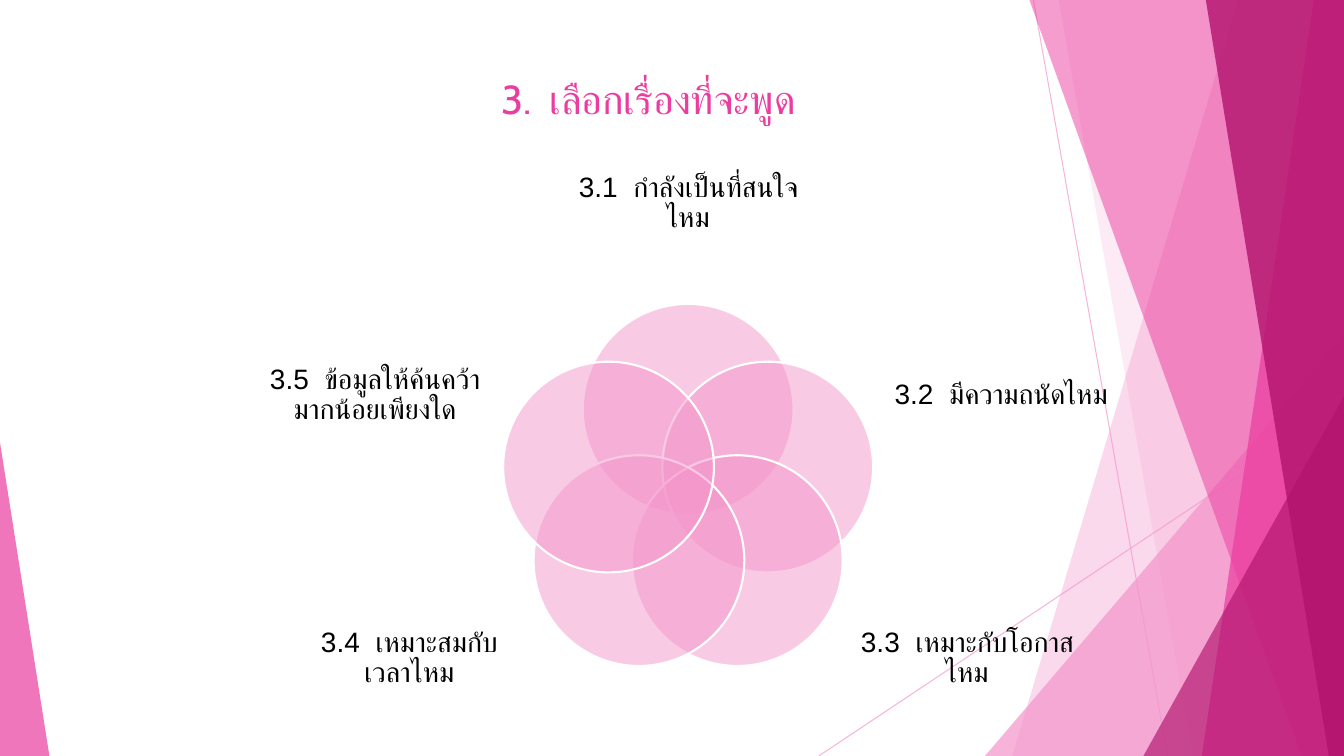
from collections import namedtuple
from math import cos, pi, sin

from lxml.etree import SubElement
from pptx import Presentation
from pptx.dml.color import RGBColor
from pptx.enum.shapes import MSO_CONNECTOR, MSO_SHAPE
from pptx.enum.text import MSO_ANCHOR, PP_ALIGN
from pptx.oxml.ns import qn
from pptx.util import Inches, Pt

Box = namedtuple("Box", "left top width height")

LIGHT_PINK = RGBColor(0xF4, 0x96, 0xCB)
PINK = RGBColor(0xEB, 0x3D, 0x9F)
MAGENTA = RGBColor(0xB2, 0x13, 0x6D)
WHITE = RGBColor(0xFF, 0xFF, 0xFF)
BLACK = RGBColor(0x00, 0x00, 0x00)

SLIDE_BOX = Box(0, 0, 13.33, 7.5)
TITLE_BOX = Box(2.02, 0.21, 8.82, 0.94)
VENN_BOX = Box(2.63, 1.31, 8.39, 5.99)

TITLE = "3.  เลือกเรื่องที่จะพูด"
TOPICS = [
    ("3.1  กำลังเป็นที่สนใจไหม", Box(2.98, 0, 2.43, 1.41)),
    ("3.2  มีความถนัดไหม", Box(6.21, 1.85, 2.18, 1.53)),
    ("3.3  เหมาะกับโอกาสไหม", Box(5.87, 4.46, 2.18, 1.53)),
    ("3.4  เหมาะสมกับเวลาไหม", Box(0.34, 4.46, 2.18, 1.53)),
    ("3.5  ข้อมูลให้ค้นคว้ามากน้อยเพียงใด", Box(0, 1.85, 2.18, 1.53)),
]


def set_opacity(fill, percent):
    color = fill._xPr.find(qn("a:solidFill"))[0]
    SubElement(color, qn("a:alpha"), val=str(percent * 1000))


def paint(shape, color, opacity):
    shape.shadow.inherit = False
    shape.fill.solid()
    shape.fill.fore_color.rgb = color
    set_opacity(shape.fill, opacity)
    shape.line.fill.background()


def add_preset(slide, preset, box, color, opacity):
    shape = slide.shapes.add_shape(preset, *map(Inches, box))
    paint(shape, color, opacity)
    return shape


def add_triangle(slide, box, apex, color, opacity):
    triangle = add_preset(slide, MSO_SHAPE.ISOSCELES_TRIANGLE, box, color, opacity)
    triangle.adjustments[0] = apex


def add_band(slide, box, top_left, bottom_left, color, opacity):
    right = box.left + box.width
    bottom = box.top + box.height
    corners = [(top_left, box.top), (right, box.top), (right, bottom), (bottom_left, bottom)]
    points = [(Inches(x), Inches(y)) for x, y in corners]
    builder = slide.shapes.build_freeform(*points[0])
    builder.add_line_segments(points[1:], close=True)
    paint(builder.convert_to_shape(), color, opacity)


def add_thin_line(slide, start, end):
    connector = slide.shapes.add_connector(MSO_CONNECTOR.STRAIGHT, *map(Inches, start + end))
    connector.line.color.rgb = LIGHT_PINK
    connector.line.width = Pt(0.75)
    set_opacity(connector.line.fill, 70)
    SubElement(connector._element.spPr, qn("a:effectLst"))


def add_text(slide, box, text, font, size, color):
    text_box = slide.shapes.add_textbox(*map(Inches, box))
    frame = text_box.text_frame
    frame.word_wrap = True
    paragraph = frame.paragraphs[0]
    paragraph.alignment = PP_ALIGN.CENTER
    run = paragraph.add_run()
    run.text = text
    run.font.name = font
    run.font.size = Pt(size)
    run.font.color.rgb = color
    return frame


def add_decoration(slide, box):
    right = box.left + box.width
    bottom = box.top + box.height

    def corner_triangle(width, height, color, opacity):
        corner = Box(right - width, bottom - height, width, height)
        add_triangle(slide, corner, 1, color, opacity)

    add_thin_line(slide, (right - 3.08, box.top), (right - 1.75, bottom))
    add_thin_line(slide, (right, bottom - 3.47), (right - 5.21, bottom))
    add_band(slide, box, right - 1.05, right - 3.29, LIGHT_PINK, 36)
    add_band(slide, box, right - 2.83, right - 1.5, LIGHT_PINK, 20)
    corner_triangle(3.56, 4.17, LIGHT_PINK, 72)
    add_band(slide, box, right - 3.12, right - 0.42, PINK, 50)
    add_band(slide, box, right - 0.3, right - 1.41, PINK, 70)
    add_band(slide, box, right - 1.37, right - 0.15, MAGENTA, 80)
    corner_triangle(1.99, 3.57, MAGENTA, 66)
    add_triangle(slide, Box(box.left, bottom - 3.11, 0.49, 3.11), 0, PINK, 70)


def add_title(slide, box):
    frame = add_text(slide, box, TITLE, "Cabin", 28.8, PINK)
    frame.vertical_anchor = MSO_ANCHOR.TOP
    frame.margin_top = Inches(0.53)


def add_venn(slide, box):
    center_x = box.left + box.width / 2
    center_y = box.top + 3.58
    diameter = 2.09
    ring_radius = 0.83
    for index, (topic, offset) in enumerate(TOPICS):
        angle = 2 * pi * index / len(TOPICS)
        left = center_x + ring_radius * sin(angle) - diameter / 2
        top = center_y - ring_radius * cos(angle) - diameter / 2
        circle_box = Box(left, top, diameter, diameter)
        circle = add_preset(slide, MSO_SHAPE.OVAL, circle_box, LIGHT_PINK, 50)
        circle.line.color.rgb = WHITE
        circle.line.width = Pt(1.5)

        label_box = Box(box.left + offset.left, box.top + offset.top, offset.width, offset.height)
        frame = add_text(slide, label_box, topic, "Arial", 20, BLACK)
        frame.vertical_anchor = MSO_ANCHOR.MIDDLE
        frame.margin_left = frame.margin_right = 0
        frame.margin_top = frame.margin_bottom = 0
        frame.paragraphs[0].line_spacing = 0.9
        frame.paragraphs[0].space_after = Pt(7)


def main():
    presentation = Presentation()
    presentation.slide_width = Inches(SLIDE_BOX.width)
    presentation.slide_height = Inches(SLIDE_BOX.height)
    slide = presentation.slides.add_slide(presentation.slide_layouts[6])
    add_decoration(slide, SLIDE_BOX)
    add_title(slide, TITLE_BOX)
    add_venn(slide, VENN_BOX)
    presentation.save("out.pptx")


if __name__ == "__main__":
    main()
